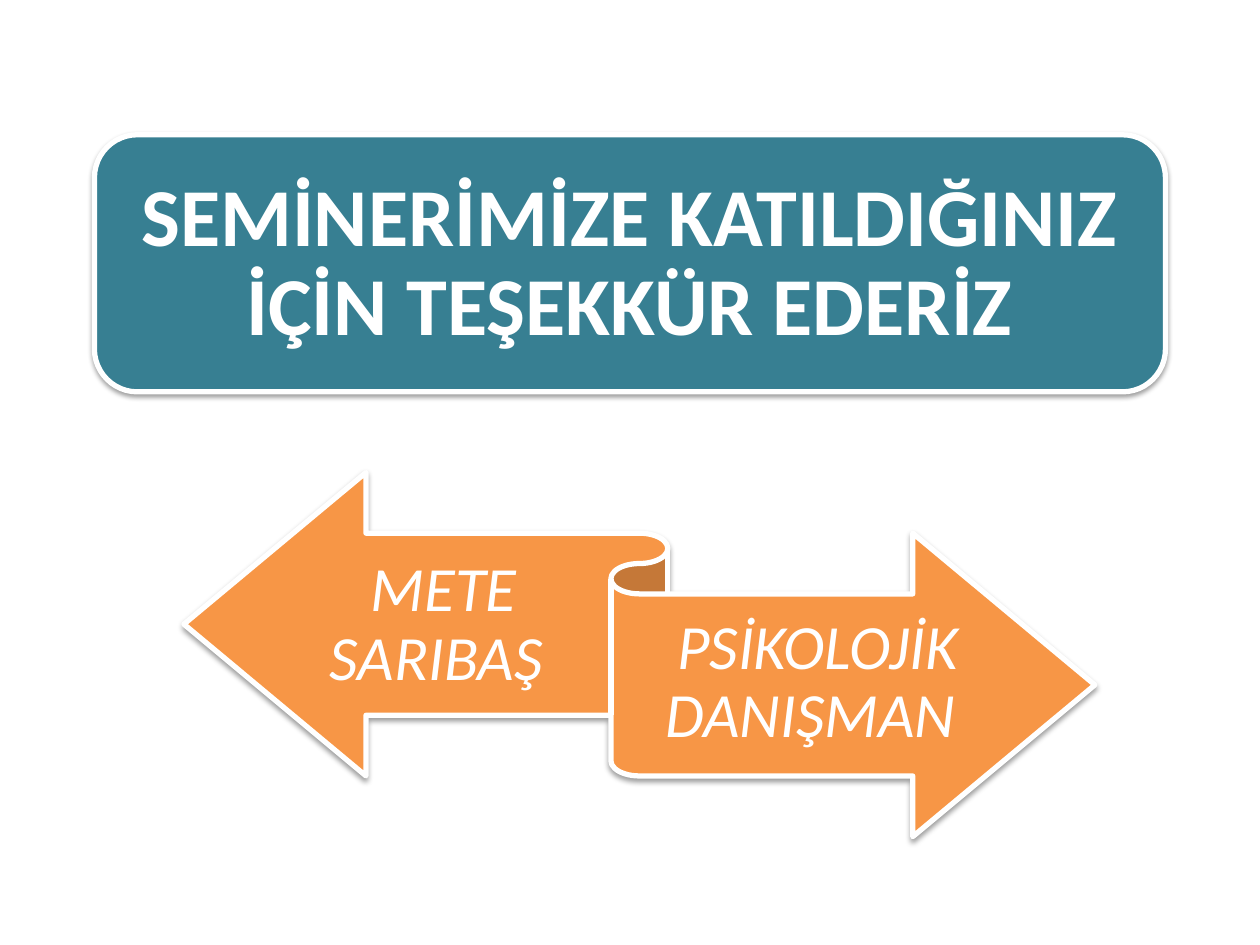
from lxml import etree
from pptx import Presentation
from pptx.dml.color import RGBColor
from pptx.enum.shapes import MSO_SHAPE
from pptx.enum.text import MSO_ANCHOR, PP_ALIGN
from pptx.oxml.ns import qn
from pptx.util import Inches, Pt

ROUND = MSO_SHAPE.ROUNDED_RECTANGLE
RIBBON = MSO_SHAPE.LEFT_RIGHT_RIBBON
MIDDLE = MSO_ANCHOR.MIDDLE
CENTER = PP_ALIGN.CENTER
COLORS = {"teal": "377F92", "orange": "F79646", "white": "FFFFFF", "black": "000000"}


class Deck:
    """Holds the shared style and the current slide."""

    font = "Calibri"

    def __init__(self, slide):
        self.slide = slide

    def color(self, name):
        return RGBColor.from_string(COLORS[name])

    def shade(self, shape):
        shape.shadow.inherit = False
        effects = shape._element.spPr.find(qn("a:effectLst"))
        outer = etree.SubElement(
            effects, qn("a:outerShdw"), blurRad=str(Pt(3.1)), dist=str(Pt(1.6)),
            dir="5400000", rotWithShape="0")
        black = etree.SubElement(outer, qn("a:srgbClr"), val=COLORS["black"])
        etree.SubElement(black, qn("a:alpha"), val="38000")

    def shape(self, kind, box, fill):
        shape = self.slide.shapes.add_shape(kind, *map(Inches, box))
        shape.fill.solid()
        shape.fill.fore_color.rgb = self.color(fill)
        shape.line.color.rgb = self.color("white")
        shape.line.width = Pt(3)
        self.shade(shape)

    def text(self, words, box, insets, size, bold=False, italic=False):
        frame = self.slide.shapes.add_textbox(*map(Inches, box)).text_frame
        frame.word_wrap = True
        frame.vertical_anchor = MIDDLE
        side, top, bottom = map(Inches, insets)
        frame.margin_left = frame.margin_right = side
        frame.margin_top, frame.margin_bottom = top, bottom
        line = frame.paragraphs[0]
        line.text = words
        line.alignment = CENTER
        line.line_spacing = 0.9
        font = line.font
        font.name, font.size = self.font, Pt(size)
        font.bold, font.italic = bold, italic
        font.color.rgb = self.color("white")


def main():
    prs = Presentation()
    prs.slide_width, prs.slide_height = Inches(10), Inches(7.5)
    deck = Deck(prs.slides.add_slide(prs.slide_layouts[6]))

    deck.shape(ROUND, (0.75, 1.07, 8.5, 2.04), "teal")
    deck.text("SEMİNERİMİZE KATILDIĞINIZ İÇİN TEŞEKKÜR EDERİZ",
              (0.85, 1.17, 8.3, 1.85), (0.2, 0.2, 0.2), 47, bold=True)

    deck.shape(RIBBON, (1.46, 3.75, 7.23, 2.89), "orange")
    for words, left, top, width in (
        ("METE SARIBAŞ ", 2.33, 4.26, 2.38),
        ("PSİKOLOJİK DANIŞMAN ", 5.08, 4.72, 2.82),
    ):
        deck.text(words, (left, top, width, 1.42), (0, 0.14, 0.15), 36, italic=True)

    prs.save("out.pptx")


if __name__ == "__main__":
    main()
